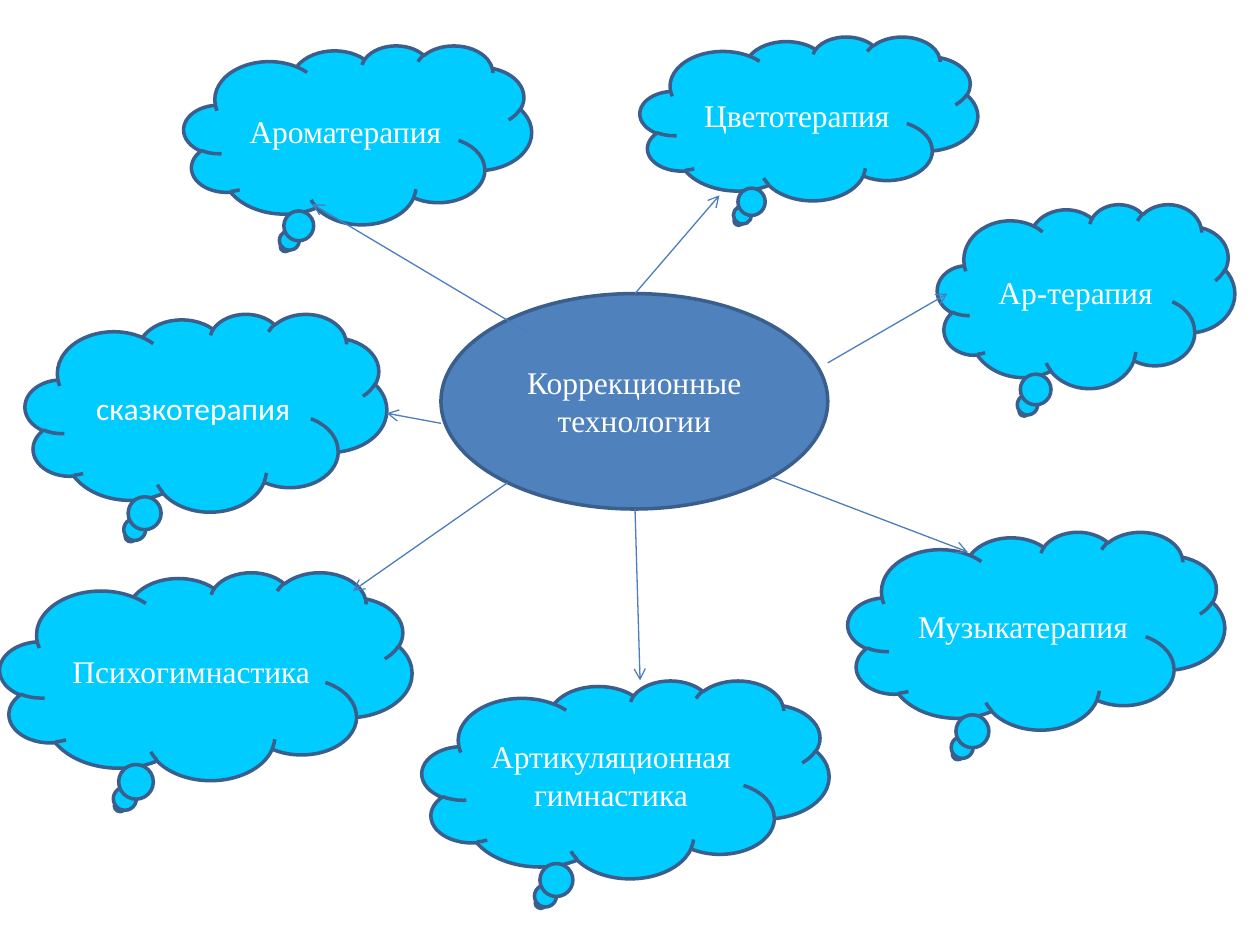
from dataclasses import dataclass

from lxml import etree
from pptx import Presentation
from pptx.dml.color import RGBColor
from pptx.enum.shapes import MSO_CONNECTOR, MSO_SHAPE
from pptx.enum.text import MSO_ANCHOR, PP_ALIGN
from pptx.oxml.ns import qn
from pptx.slide import Slide
from pptx.util import Emu, Pt

ELLIPSE = MSO_SHAPE.OVAL
CLOUD = MSO_SHAPE.CLOUD_CALLOUT
STRAIGHT = MSO_CONNECTOR.STRAIGHT
MIDDLE = MSO_ANCHOR.MIDDLE
CENTER = PP_ALIGN.CENTER

PX_PER_INCH = 100
EMU_PER_PX = 914400 // PX_PER_INCH
BLANK_LAYOUT = 6


@dataclass(frozen=True)
class Theme:
    center_fill: RGBColor = RGBColor(0x4F, 0x81, 0xBD)
    cloud_fill: RGBColor = RGBColor(0x00, 0xCC, 0xFF)
    outline: RGBColor = RGBColor(0x3A, 0x5F, 0x8C)
    arrow: RGBColor = RGBColor(0x4B, 0x7E, 0xBC)
    text: RGBColor = RGBColor(0xFF, 0xFF, 0xFF)
    font: str = "Times New Roman"
    alternate_font: str = "Calibri"
    text_size: Pt = Pt(18)
    outline_width: Pt = Pt(2)
    arrow_width: Pt = Pt(0.75)


THEME = Theme()


@dataclass(frozen=True)
class Bubble:
    text: str
    left: int
    top: int
    width: int
    height: int
    geometry: MSO_SHAPE = CLOUD
    fill: RGBColor = THEME.cloud_fill
    font: str = THEME.font


@dataclass(frozen=True)
class Arrow:
    start_x: int
    start_y: int
    end_x: int
    end_y: int


BUBBLES = (
    Bubble("Коррекционные технологии", 350, 233, 307, 171, ELLIPSE, THEME.center_fill),
    Bubble("Ароматерапия", 146, 36, 276, 142),
    Bubble("Цветотерапия", 508, 29, 268, 130),
    Bubble("Психогимнастика", 0, 454, 327, 165),
    Bubble("Ар-терапия", 744, 162, 236, 146),
    Bubble("Артикуляционная гимнастика", 335, 540, 323, 157),
    Bubble("Музыкатерапия", 673, 422, 299, 157),
    Bubble("сказкотерапия", 20, 249, 287, 157, font=THEME.alternate_font),
)

ARROWS = (
    Arrow(421, 265, 248, 162),
    Arrow(504, 233, 571, 155),
    Arrow(657, 288, 752, 233),
    Arrow(613, 379, 768, 438),
    Arrow(504, 404, 508, 540),
    Arrow(403, 383, 280, 469),
    Arrow(350, 336, 307, 328),
)


def px(length: int) -> Emu:
    return Emu(length * EMU_PER_PX)


def draw_bubble(slide: Slide, bubble: Bubble) -> None:
    shape = slide.shapes.add_shape(
        bubble.geometry, px(bubble.left), px(bubble.top), px(bubble.width), px(bubble.height)
    )
    shape.shadow.inherit = False
    shape.fill.solid()
    shape.fill.fore_color.rgb = bubble.fill
    shape.line.color.rgb = THEME.outline
    shape.line.width = THEME.outline_width
    text_frame = shape.text_frame
    text_frame.word_wrap = True
    text_frame.vertical_anchor = MIDDLE
    text_frame.text = bubble.text
    paragraph = text_frame.paragraphs[0]
    paragraph.alignment = CENTER
    font = paragraph.runs[0].font
    font.name = bubble.font
    font.size = THEME.text_size
    font.color.rgb = THEME.text


def draw_arrow(slide: Slide, arrow: Arrow) -> None:
    connector = slide.shapes.add_connector(
        STRAIGHT, px(arrow.start_x), px(arrow.start_y), px(arrow.end_x), px(arrow.end_y)
    )
    connector.line.color.rgb = THEME.arrow
    connector.line.width = THEME.arrow_width
    properties = connector.element.spPr
    etree.SubElement(properties.find(qn("a:ln")), qn("a:tailEnd"), type="arrow")
    etree.SubElement(properties, qn("a:effectLst"))


def main() -> None:
    presentation = Presentation()
    presentation.slide_width = px(1000)
    presentation.slide_height = px(750)
    slide = presentation.slides.add_slide(presentation.slide_layouts[BLANK_LAYOUT])
    for bubble in BUBBLES:
        draw_bubble(slide, bubble)
    for arrow in ARROWS:
        draw_arrow(slide, arrow)
    presentation.save("out.pptx")


if __name__ == "__main__":
    main()
